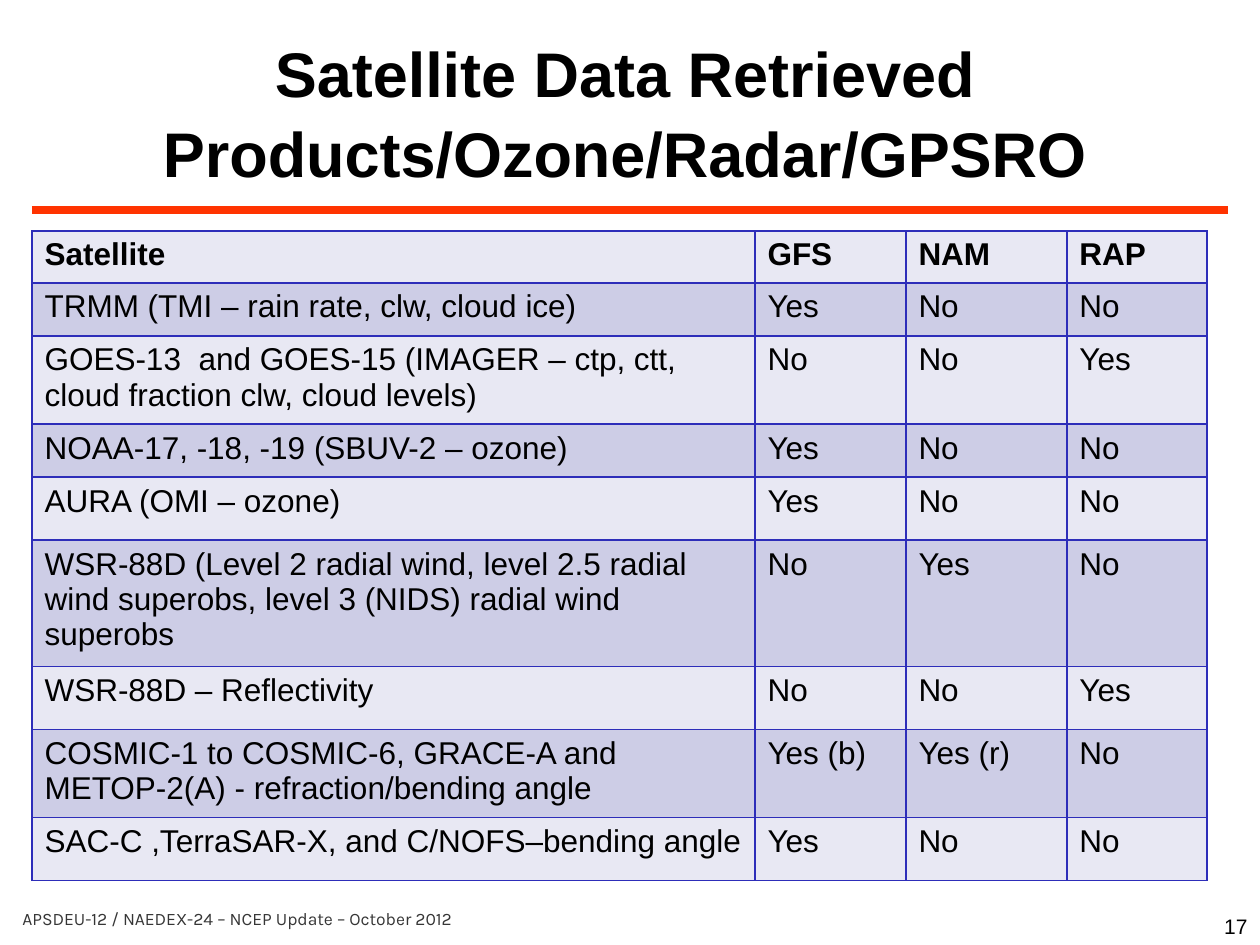
import pptx
import pptx.dml.color
import pptx.enum.shapes
import pptx.enum.text
import pptx.oxml
import pptx.oxml.ns
import pptx.util

EMU_PER_PX = 914400 / 126
ALIGN = pptx.enum.text.PP_ALIGN
ANCHOR = pptx.enum.text.MSO_ANCHOR

BORDER = "2D2DB9"
BANDS = ("E8E8F3", "CDCDE6")
COLUMN_WIDTHS = (723, 151, 161, 140)
ROW_HEIGHTS = (52, 53, 88, 53, 63, 126, 63, 88, 63)
ROWS = (
    ("Satellite", "GFS", "NAM", "RAP"),
    ("TRMM (TMI – rain rate, clw, cloud ice)", "Yes", "No", "No"),
    ("GOES-13  and GOES-15 (IMAGER – ctp, ctt, cloud fraction clw, cloud levels)",
     "No", "No", "Yes"),
    ("NOAA-17, -18, -19 (SBUV-2 – ozone)", "Yes", "No", "No"),
    ("AURA (OMI – ozone)", "Yes", "No", "No"),
    ("WSR-88D (Level 2 radial wind, level 2.5 radial wind superobs, "
     "level 3 (NIDS) radial wind superobs", "No", "Yes", "No"),
    ("WSR-88D – Reflectivity", "No", "No", "Yes"),
    ("COSMIC-1 to COSMIC-6, GRACE-A and METOP-2(A) - refraction/bending angle",
     "Yes (b)", "Yes (r)", "No"),
    ("SAC-C ,TerraSAR-X, and C/NOFS–bending angle", "Yes", "No", "No"),
)


def px(length):
    return pptx.util.Emu(round(length * EMU_PER_PX))


def color(hex_code):
    return pptx.dml.color.RGBColor.from_string(hex_code)


def write(paragraph, text, size, font="Arial", hex_code="000000", bold=False):
    span = paragraph.add_run()
    span.text = text
    values = {"size": pptx.util.Pt(size), "name": font, "bold": bold}
    for name, value in values.items():
        setattr(span.font, name, value)
    span.font.color.rgb = color(hex_code)


def add_text(page, text, place, size, align, anchor, **style):
    box = page.shapes.add_textbox(*map(px, place))
    frame = box.text_frame
    for name, value in {"word_wrap": True, "vertical_anchor": anchor}.items():
        setattr(frame, name, value)
    frame.paragraphs[0].alignment = align
    write(frame.paragraphs[0], text, size, **style)
    return frame.paragraphs[0]


def add_rule(page, left, right, top):
    rule = page.shapes.add_connector(
        pptx.enum.shapes.MSO_CONNECTOR.STRAIGHT,
        px(left), px(top), px(right), px(top))
    rule.line.color.rgb = color("FF3300")
    rule.line.width = pptx.util.Pt(4.5)
    rule._element.spPr.append(pptx.oxml.parse_xml(
        "<a:effectLst %s/>" % pptx.oxml.ns.nsdecls("a")))


def add_borders(cell):
    # Borders must come before the fill in the cell properties
    properties = cell._tc.get_or_add_tcPr()
    for index, side in enumerate(("lnL", "lnR", "lnT", "lnB")):
        properties.insert(index, pptx.oxml.parse_xml(
            '<a:%s %s w="12700"><a:solidFill><a:srgbClr val="%s"/></a:solidFill></a:%s>'
            % (side, pptx.oxml.ns.nsdecls("a"), BORDER, side)))


def add_table(page, left, top):
    table = page.shapes.add_table(
        len(ROWS), len(COLUMN_WIDTHS), px(left), px(top),
        px(sum(COLUMN_WIDTHS)), px(sum(ROW_HEIGHTS))).table
    for column, width in zip(table.columns, COLUMN_WIDTHS):
        column.width = px(width)
    for row, height in zip(table.rows, ROW_HEIGHTS):
        row.height = px(height)
    for row_index, texts in enumerate(ROWS):
        for column_index, text in enumerate(texts):
            cell = table.cell(row_index, column_index)
            cell.fill.solid()
            cell.fill.fore_color.rgb = color(BANDS[row_index % 2])
            add_borders(cell)
            write(cell.text_frame.paragraphs[0], text, 18, bold=row_index == 0)


def main():
    deck = pptx.Presentation()
    deck.slide_width, deck.slide_height = px(1260), px(945)
    page = deck.slides.add_slide(deck.slide_layouts[6])

    # Heading and rule
    title = add_text(page, "Satellite Data Retrieved Products/Ozone/Radar/GPSRO",
                     (126, 32, 998, 157), 36, ALIGN.CENTER, ANCHOR.MIDDLE, bold=True)
    title.line_spacing = 1.05
    add_rule(page, 32, 1228, 210)

    # Data use by model
    add_table(page, 32, 231)

    # Footer and page number
    add_text(page, "APSDEU-12 / NAEDEX-24 – NCEP Update – October 2012",
             (10, 892, 1187, 53), 10, ALIGN.LEFT, ANCHOR.MIDDLE,
             font="Karla", hex_code="363636")
    add_text(page, "17", (998, 882, 262, 63), 12, ALIGN.RIGHT, ANCHOR.BOTTOM)

    deck.save("out.pptx")


if __name__ == "__main__":
    main()
